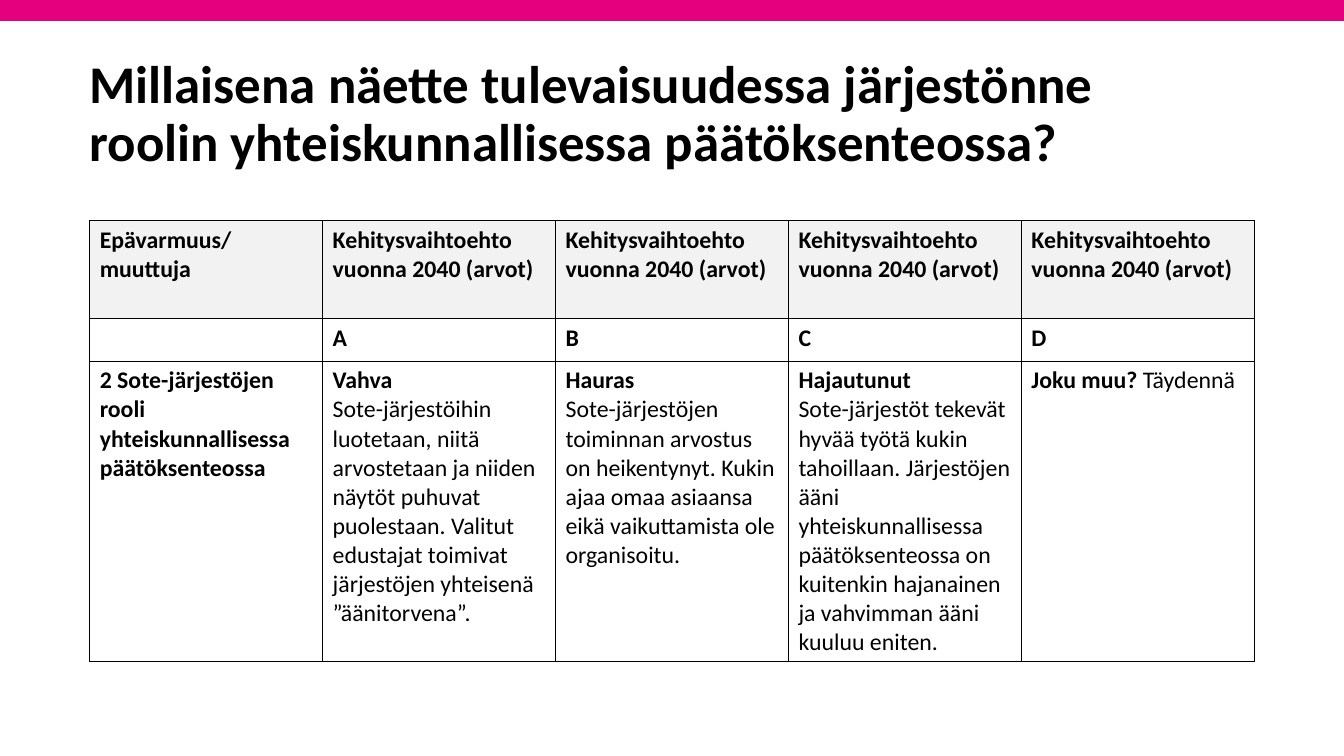
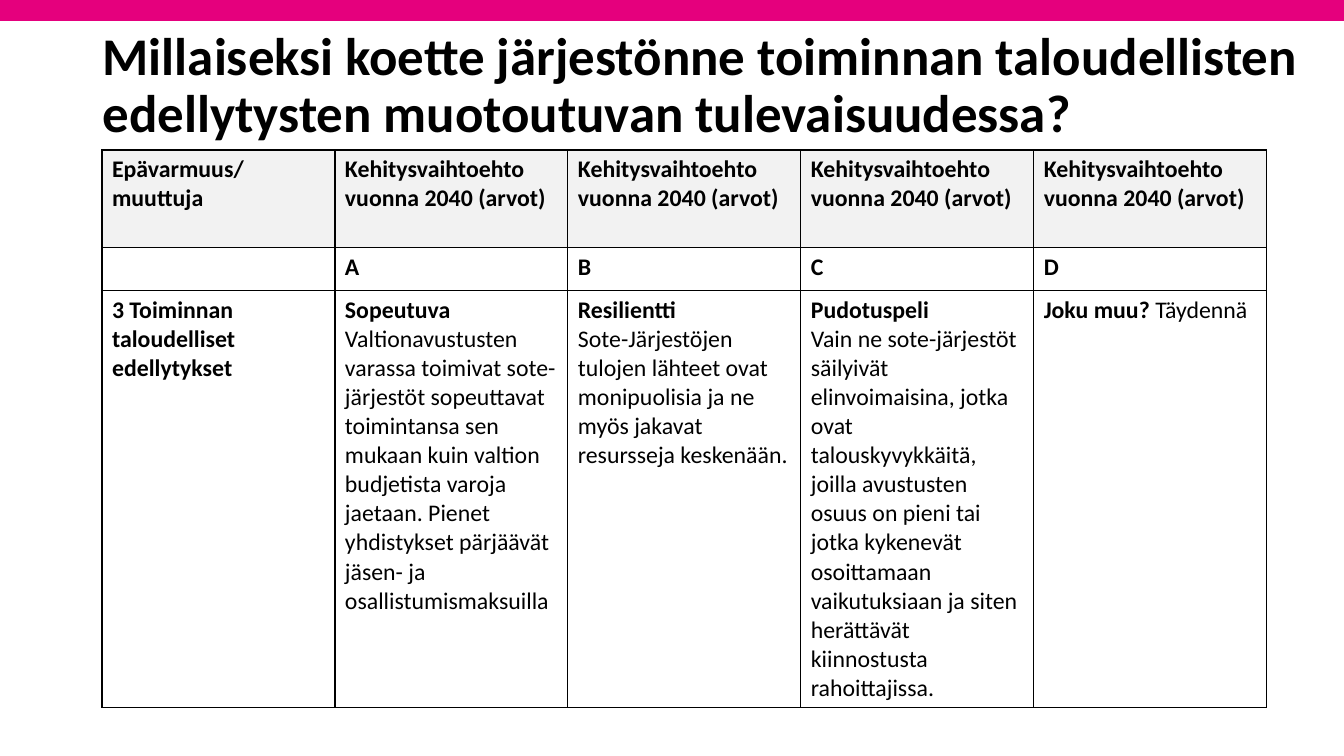
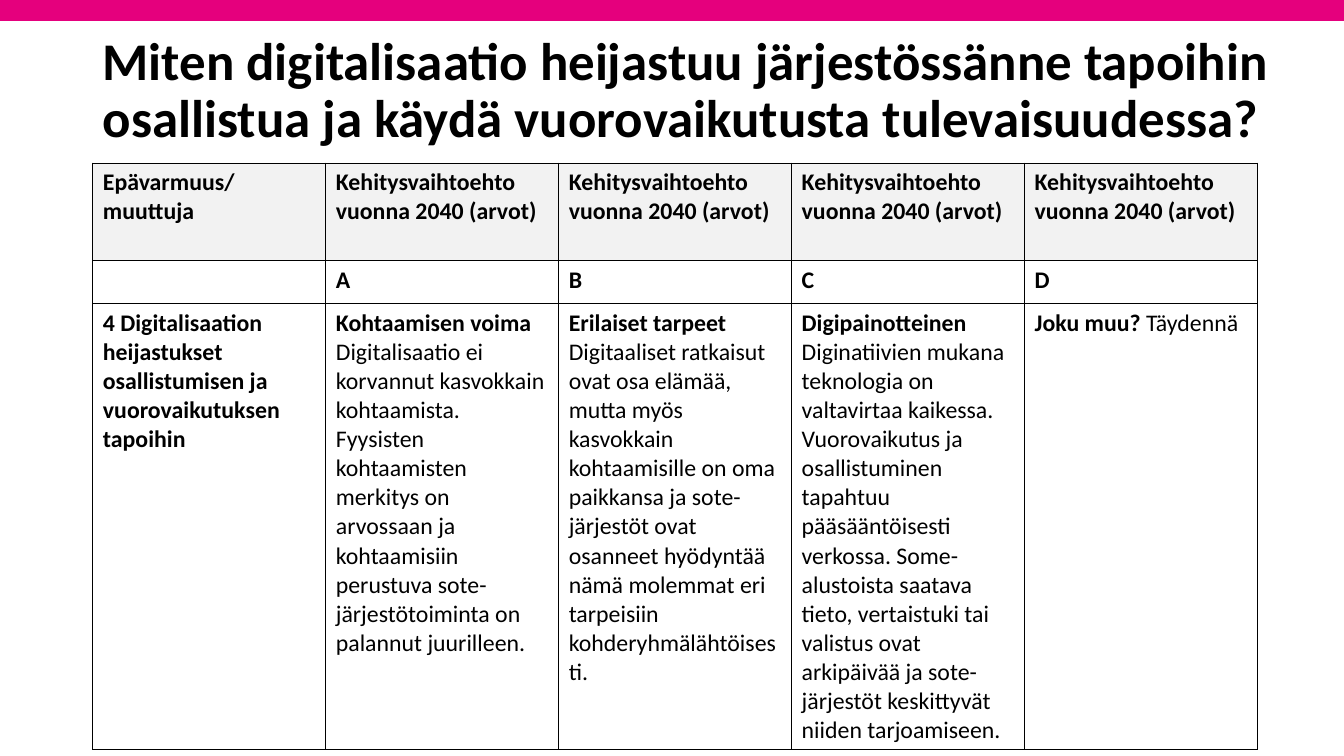
"""Build three slides of scenario tables about the future of organisations."""
from lxml.etree import SubElement
from pptx import Presentation
from pptx.dml.color import RGBColor
from pptx.enum.shapes import MSO_SHAPE as Preset
from pptx.enum.text import MSO_ANCHOR as Anchor
from pptx.oxml.ns import qn
from pptx.util import Cm, Pt

COLOURS = {"band": "E5007D", "text": "000000", "border": "000000",
           "header": "F2F2F2", "body": "FFFFFF"}
FONT = "Calibri"
TITLE_SIZE, CELL_SIZE = 37.8, 17
SLIDE_WIDTH, SLIDE_HEIGHT = 33.87, 19.05
BAND_HEIGHT, TITLE_HEIGHT = 0.53, 2.67
COLUMN_WIDTH, HEADER_HEIGHT, LETTER_HEIGHT = 5.87, 2.46, 1.08

VARIABLE = ("Epävarmuus/\nmuuttuja", "")
ALTERNATIVE = ("Kehitysvaihtoehto vuonna 2040 (arvot)", "")
HEADER_ROW = [VARIABLE] + [ALTERNATIVE] * 4
LETTER_ROW = [(letter, "") for letter in ("", "A", "B", "C", "D")]
OTHER = ("Joku muu? ", "Täydennä")

QUESTIONS = [
    {
        "title": "Millaisena näette tulevaisuudessa järjestönne roolin "
                 "yhteiskunnallisessa päätöksenteossa?",
        "title_box": (2.01, 1.57, 29.21),
        "table_box": (2.26, 5.56, 7.57),
        "variable": "2 Sote-järjestöjen rooli\vyhteiskunnallisessa päätöksenteossa",
        "scenarios": [
            ("Vahva\v",
             "Sote-järjestöihin luotetaan, niitä arvostetaan ja niiden näytöt puhuvat "
             "puolestaan. Valitut edustajat toimivat järjestöjen yhteisenä ”äänitorvena”."),
            ("Hauras\v",
             "Sote-järjestöjen toiminnan arvostus on heikentynyt. Kukin ajaa omaa "
             "asiaansa eikä vaikuttamista ole organisoitu."),
            ("Hajautunut\v",
             "Sote-järjestöt tekevät hyvää työtä kukin tahoillaan. Järjestöjen ääni "
             "yhteiskunnallisessa päätöksenteossa on kuitenkin hajanainen ja vahvimman "
             "ääni kuuluu eniten."),
        ],
    },
    {
        "title": "Millaiseksi koette järjestönne toiminnan taloudellisten "
                 "edellytysten muotoutuvan tulevaisuudessa?",
        "title_box": (2.34, 0.86, 30.89),
        "table_box": (2.57, 3.78, 10.5),
        "variable": "3 Toiminnan\vtaloudelliset edellytykset",
        "scenarios": [
            ("Sopeutuva\v",
             "Valtionavustusten varassa toimivat sote-järjestöt sopeuttavat toimintansa "
             "sen mukaan kuin valtion budjetista varoja jaetaan. Pienet yhdistykset "
             "pärjäävät jäsen- ja osallistumismaksuilla"),
            ("Resilientti\v",
             "Sote-Järjestöjen tulojen lähteet ovat monipuolisia ja ne myös jakavat "
             "resursseja keskenään."),
            ("Pudotuspeli\v",
             "Vain ne sote-järjestöt säilyivät elinvoimaisina, jotka ovat "
             "talouskyvykkäitä, joilla avustusten osuus on pieni tai jotka kykenevät "
             "osoittamaan vaikutuksiaan ja siten herättävät kiinnostusta rahoittajissa."),
        ],
    },
    {
        "title": "Miten digitalisaatio heijastuu järjestössänne tapoihin osallistua "
                 "ja käydä vuorovaikutusta tulevaisuudessa?",
        "title_box": (2.34, 0.99, 30.61),
        "table_box": (2.34, 4.11, 11.23),
        "variable": "4 Digitalisaation heijastukset osallistumisen ja "
                    "vuorovaikutuksen tapoihin",
        "scenarios": [
            ("Kohtaamisen voima\v",
             "Digitalisaatio ei korvannut kasvokkain kohtaamista. Fyysisten "
             "kohtaamisten merkitys on arvossaan ja kohtaamisiin perustuva "
             "sote-järjestötoiminta on palannut juurilleen."),
            ("Erilaiset tarpeet\v",
             "Digitaaliset ratkaisut ovat osa elämää, mutta myös kasvokkain "
             "kohtaamisille on oma paikkansa ja sote-järjestöt ovat osanneet hyödyntää "
             "nämä molemmat eri tarpeisiin kohderyhmälähtöisesti."),
            ("Digipainotteinen\v",
             "Diginatiivien mukana teknologia on valtavirtaa kaikessa. Vuorovaikutus ja "
             "osallistuminen tapahtuu pääsääntöisesti verkossa. Some-alustoista saatava "
             "tieto, vertaistuki tai valistus ovat arkipäivää ja sote-järjestöt "
             "keskittyvät niiden tarjoamiseen."),
        ],
    },
]


def paint(fill, colour):
    fill.solid()
    fill.fore_color.rgb = RGBColor.from_string(COLOURS[colour])


def style_text(paragraph, size):
    font = paragraph.font
    font.name, font.size, font.bold = FONT, Pt(size), True
    font.color.rgb = RGBColor.from_string(COLOURS["text"])


def add_band(slide):
    band = slide.shapes.add_shape(Preset.RECTANGLE, 0, 0, Cm(SLIDE_WIDTH), Cm(BAND_HEIGHT))
    band.shadow.inherit = False
    paint(band.fill, "band")
    band.line.fill.background()


def add_title(slide, title, title_box):
    left, top, width = map(Cm, title_box)
    frame = slide.shapes.add_textbox(left, top, width, Cm(TITLE_HEIGHT)).text_frame
    frame.word_wrap = True
    frame.vertical_anchor = Anchor.MIDDLE
    heading = frame.paragraphs[0]
    heading.text = title
    heading.line_spacing = 0.9
    style_text(heading, TITLE_SIZE)


def add_borders(cell):
    properties = cell._tc.get_or_add_tcPr()
    for side in ("a:lnL", "a:lnR", "a:lnT", "a:lnB"):
        border = SubElement(properties, qn(side), w=str(Pt(1)))
        border_fill = SubElement(border, qn("a:solidFill"))
        SubElement(border_fill, qn("a:srgbClr"), val=COLOURS["border"])


def write_cell(cell, name, description, colour):
    add_borders(cell)
    paint(cell.fill, colour)
    frame = cell.text_frame
    frame.text = name
    for paragraph in frame.paragraphs:
        style_text(paragraph, CELL_SIZE)
    if description:
        detail = frame.paragraphs[-1].add_run()
        detail.text = description
        detail.font.bold = False


def add_scenario_table(slide, rows, table_box):
    left, top, scenario_height = table_box
    heights = [HEADER_HEIGHT, LETTER_HEIGHT, scenario_height]
    columns = len(HEADER_ROW)
    table = slide.shapes.add_table(len(rows), columns, Cm(left), Cm(top),
                                   Cm(COLUMN_WIDTH * columns), Cm(sum(heights))).table
    table.first_row = table.horz_banding = False
    for column in table.columns:
        column.width = Cm(COLUMN_WIDTH)
    for index, (entries, height) in enumerate(zip(rows, heights)):
        table.rows[index].height = Cm(height)
        colour = "body" if index else "header"
        for cell, (name, description) in zip(table.rows[index].cells, entries):
            write_cell(cell, name, description, colour)


def main():
    deck = Presentation()
    deck.slide_width, deck.slide_height = Cm(SLIDE_WIDTH), Cm(SLIDE_HEIGHT)
    blank = deck.slide_layouts[6]
    for question in QUESTIONS:
        slide = deck.slides.add_slide(blank)
        add_band(slide)
        add_title(slide, question["title"], question["title_box"])
        scenario_row = [(question["variable"], ""), *question["scenarios"], OTHER]
        add_scenario_table(slide, [HEADER_ROW, LETTER_ROW, scenario_row],
                           question["table_box"])
    deck.save("out.pptx")


if __name__ == "__main__":
    main()
